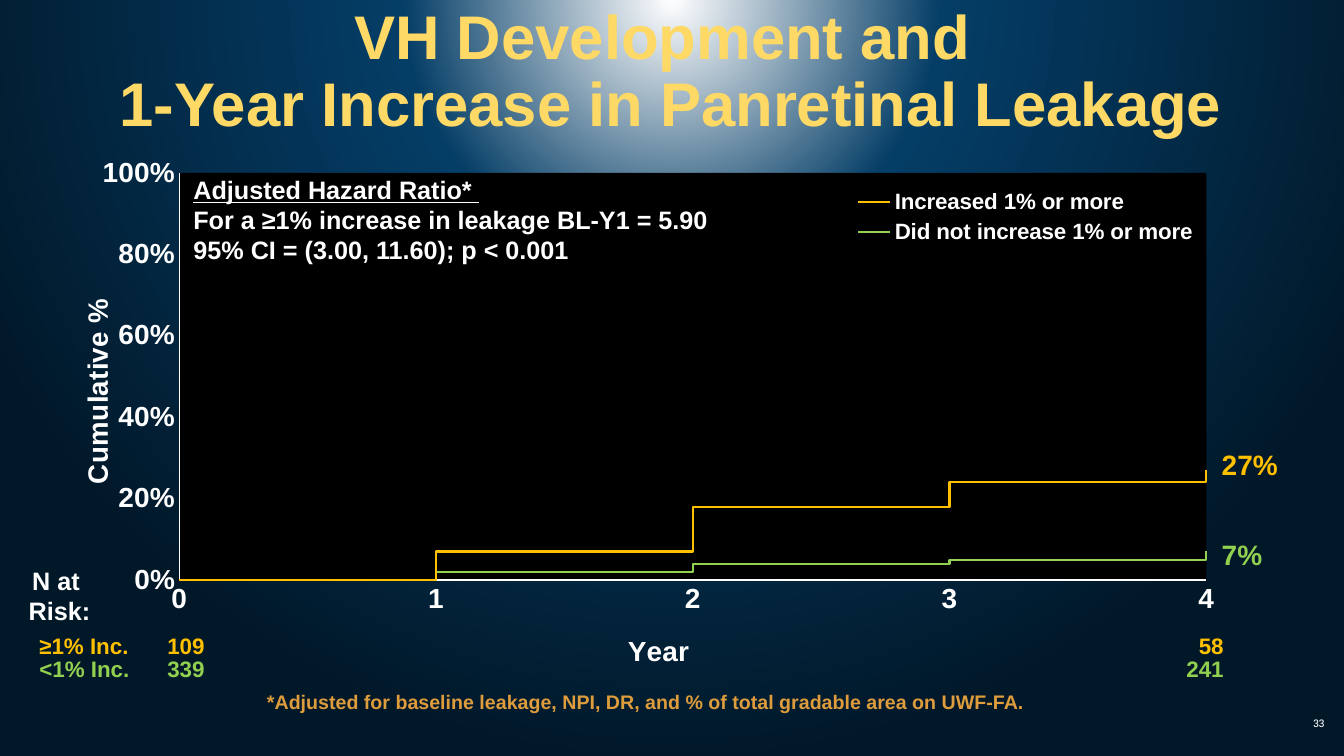
from pptx import Presentation
from pptx.chart.data import XyChartData
from pptx.dml.color import RGBColor
from pptx.enum.chart import XL_CHART_TYPE, XL_LEGEND_POSITION, XL_TICK_MARK
from pptx.enum.text import MSO_ANCHOR, PP_ALIGN
from pptx.oxml import parse_xml
from pptx.oxml.ns import qn
from pptx.util import Pt

CENTER, RIGHT = PP_ALIGN.CENTER, PP_ALIGN.RIGHT
MIDDLE = MSO_ANCHOR.MIDDLE
NO_TICK = XL_TICK_MARK.NONE
SCATTER = XL_CHART_TYPE.XY_SCATTER_LINES_NO_MARKERS
LEGEND_TOP = XL_LEGEND_POSITION.TOP

COLORS = {
    "white": "FFFFFF", "black": "000000", "blue": "043D66", "navy": "011829",
    "title": "FFD966", "increased": "FFC000", "stable": "92D050",
    "footnote": "DE9C3C",
}
NS_A = 'xmlns:a="http://schemas.openxmlformats.org/drawingml/2006/main"'
NS_C = 'xmlns:c="http://schemas.openxmlformats.org/drawingml/2006/chart"'
NS_P = 'xmlns:p="http://schemas.openxmlformats.org/presentationml/2006/main"'
NO_STYLE = "{2D5ABB26-0587-4C30-8999-92F81FD0307C}"

YEARS = [0, 1, 1, 2, 2, 3, 3, 4, 4]
CURVES = [
    ("Increased 1% or more", "increased",
     [0, 0, 0.07, 0.07, 0.18, 0.18, 0.24, 0.24, 0.27]),
    ("Did not increase 1% or more", "stable",
     [0, 0, 0.02, 0.02, 0.04, 0.04, 0.05, 0.05, 0.07]),
]


def rgb(name):
    return RGBColor.from_string(COLORS[name])


def set_font(font, size, color="white", name="Arial", bold=True):
    font.size, font.name, font.bold = Pt(size), name, bold
    font.color.rgb = rgb(color)


def write(tf, lines, size, colors=("white",), align=None, spacing=None,
          underline_first=False, **font):
    """Fill a text frame, one paragraph a line; the last colour carries on."""
    for i, line in enumerate(lines):
        p = tf.paragraphs[0] if i == 0 else tf.add_paragraph()
        p.alignment, p.line_spacing = align, spacing
        r = p.add_run()
        r.text = line
        set_font(r.font, size, colors[min(i, len(colors) - 1)], **font)
        if underline_first and i == 0:
            r.font.underline = True


def add_text(s, box, lines, size, wrap=True, anchor=None, **fmt):
    tf = s.shapes.add_textbox(*map(Pt, box)).text_frame
    tf.word_wrap = wrap
    tf.vertical_anchor = anchor
    write(tf, lines, size, **fmt)


def add_plain_table(s, left, top, widths, heights):
    """Add a table with neither fill nor borders."""
    frame = s.shapes.add_table(len(heights), len(widths), Pt(left), Pt(top),
                               Pt(sum(widths)), Pt(sum(heights)))
    table = frame.table
    table.first_row = table.horz_banding = False
    table._tbl.tblPr.find(qn("a:tableStyleId")).text = NO_STYLE
    for column, width in zip(table.columns, widths):
        column.width = Pt(width)
    for row, height in zip(table.rows, heights):
        row.height = Pt(height)
    for cell in table.iter_cells():
        cell.fill.background()
    return table


def set_background(s):
    stops = "".join(
        f'<a:gs pos="{pos * 1000}"><a:srgbClr val="{COLORS[name]}"/></a:gs>'
        for pos, name in ((0, "white"), (35, "blue"), (100, "navy")))
    bg = parse_xml(
        f'<p:bg {NS_P} {NS_A}><p:bgPr><a:gradFill rotWithShape="1">'
        f'<a:gsLst>{stops}</a:gsLst><a:path path="circle">'
        '<a:fillToRect l="50000" t="-80000" r="50000" b="180000"/></a:path>'
        '</a:gradFill><a:effectLst/></p:bgPr></p:bg>')
    s._element.cSld.insert(0, bg)


def place(element, x, y, w=None, h=None, inner=False):
    """Give a chart part a manual layout in fractions of the chart."""
    for old in element.findall(qn("c:layout")):
        element.remove(old)
    parts = '<c:layoutTarget val="inner"/>' if inner else ""
    parts += '<c:xMode val="edge"/><c:yMode val="edge"/>'
    parts += "".join(f'<c:{tag} val="{value}"/>'
                     for tag, value in zip("xywh", (x, y, w, h))
                     if value is not None)
    layout = parse_xml(f"<c:layout {NS_C}><c:manualLayout>{parts}"
                       "</c:manualLayout></c:layout>")
    overlay = element.find(qn("c:overlay"))
    if overlay is None:
        element.insert(0, layout)
    else:
        overlay.addprevious(layout)


def format_axis(axis, title, title_at, top, step, number_format):
    axis.minimum_scale, axis.maximum_scale, axis.major_unit = 0, top, step
    axis.has_major_gridlines = False
    axis.major_tick_mark = axis.minor_tick_mark = NO_TICK
    axis.format.line.color.rgb = rgb("white")
    axis.format.line.width = Pt(0.75)
    labels = axis.tick_labels
    labels.number_format, labels.number_format_is_linked = number_format, False
    set_font(labels.font, 20)
    write(axis.axis_title.text_frame, [title], 20)
    place(axis.axis_title._element, *title_at)


def add_step_chart(s):
    data = XyChartData()
    for name, _, values in CURVES:
        series = data.add_series(name)
        for year, value in zip(YEARS, values):
            series.add_data_point(year, value)
    chart = s.shapes.add_chart(SCATTER, Pt(44.64), Pt(112.32), Pt(833.76),
                               Pt(370.8), data).chart
    chart.has_title = False
    set_font(chart.font, 20)
    for series, (_, color, _) in zip(chart.plots[0].series, CURVES):
        series.smooth = False
        series.format.line.color.rgb = rgb(color)
        series.format.line.width = Pt(1.5)

    format_axis(chart.category_axis, "Year", (0.48, 0.92), 4, 1, "0")
    format_axis(chart.value_axis, "Cumulative %", (0.01, 0.27), 1, 0.2, "0%")

    chart.has_legend = True
    chart.legend.position = LEGEND_TOP
    chart.legend.include_in_layout = True
    set_font(chart.legend.font, 16)
    place(chart.legend._element, 0.67, 0.05, 0.31, 0.13)

    plot_area = chart._chartSpace.chart.plotArea
    place(plot_area, 0.1, 0.029, 0.88, 0.796, inner=True)
    plot_area.append(parse_xml(
        f'<c:spPr {NS_C} {NS_A}><a:solidFill>'
        f'<a:srgbClr val="{COLORS["black"]}"/></a:solidFill></c:spPr>'))


def add_tables(s):
    pair = ("increased", "stable")
    risk = add_plain_table(s, 20.88, 451.44,
                           [91.44, 151.2, 172.08, 79.2, 170.64, 195.84], [45.36])
    for col, lines, align in ((0, ["≥1% Inc.", "<1% Inc."], None),
                              (1, ["109", "339"], None),
                              (5, ["58", "241"], RIGHT)):
        write(risk.cell(0, col).text_frame, lines, 16, colors=pair,
              align=align, spacing=0.9)
    ends = add_plain_table(s, 865.44, 318.24, [59.76], [64.08, 45.36])
    for row, (label, color) in enumerate(zip(("27%", "7%"), pair)):
        write(ends.cell(row, 0).text_frame, [label], 20, colors=(color,))


def main():
    prs = Presentation()
    prs.slide_width, prs.slide_height = Pt(960), Pt(540)
    s = prs.slides.add_slide(prs.slide_layouts[6])
    set_background(s)
    add_text(s, (72, 0, 815, 104.4),
             ["VH Development and ", "1-Year Increase in Panretinal Leakage"],
             44, colors=("title",), align=CENTER, spacing=0.9, anchor=MIDDLE)
    add_text(s, (894.24, 502.56, 59.04, 28.8), ["33"], 7.5, align=RIGHT,
             anchor=MIDDLE, name="Roboto Slab", bold=False)
    add_step_chart(s)
    add_tables(s)
    add_text(s, (12.96, 400.32, 59.04, 51.12), ["N at ", "Risk:"], 18,
             wrap=False, align=CENTER)
    add_text(s, (131.04, 120.96, 516.96, 94.32),
             ["Adjusted Hazard Ratio* ",
              "For a ≥1% increase in leakage BL-Y1 = 5.90",
              "95% CI = (3.00, 11.60); p < 0.001"], 18, underline_first=True)
    add_text(s, (183.6, 489.6, 635.04, 24.48),
             ["*Adjusted for baseline leakage, NPI, DR, and % of total "
              "gradable area on UWF-FA."], 14, colors=("footnote",))
    prs.save("out.pptx")


if __name__ == "__main__":
    main()
